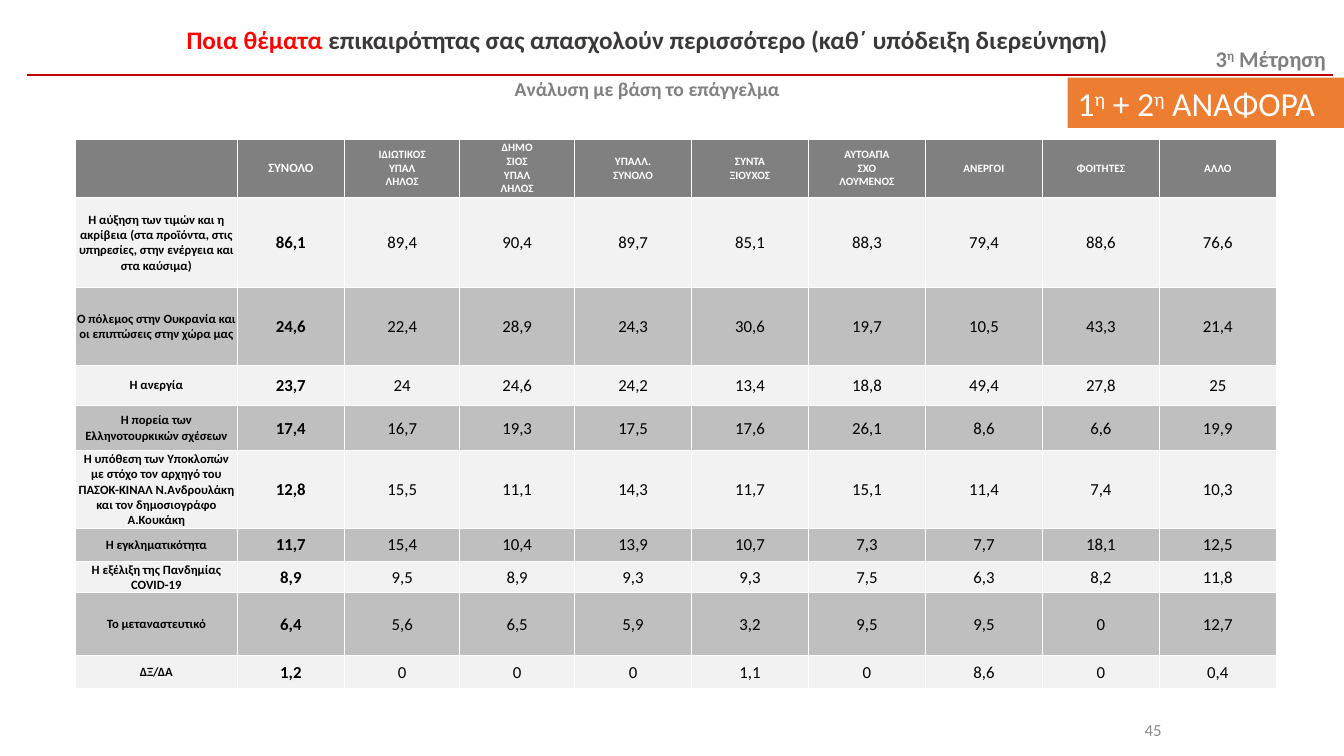
import pptx
import pptx.dml.color
import pptx.enum.shapes
import pptx.enum.text
import pptx.oxml
import pptx.oxml.ns
import pptx.util
from pptx.util import Inches

ALIGN = pptx.enum.text.PP_ALIGN
ANCHOR = pptx.enum.text.MSO_ANCHOR
AUTO_SIZE = pptx.enum.text.MSO_AUTO_SIZE

TITLE = [("Ποια θέματα ", "FF0000"),
         ("επικαιρότητας σας απασχολούν περισσότερο (καθ΄ υπόδειξη διερεύνηση)", "3B3838")]
SUBTITLE = "Ανάλυση με βάση το επάγγελμα"
WAVE = ["3", "η", " Μέτρηση"]
BANNER = ["1", "η", " + 2", "η", " ΑΝΑΦΟΡΑ"]
PAGE = "45"

HEADERS = [
    [""], ["ΣΥΝΟΛΟ"], ["ΙΔΙΩΤΙΚΟΣ", "ΥΠΑΛ", "ΛΗΛΟΣ"], ["ΔΗΜΟ", "ΣΙΟΣ", "ΥΠΑΛ", "ΛΗΛΟΣ"],
    ["ΥΠΑΛΛ.", "ΣΥΝΟΛΟ"], ["ΣΥΝΤΑ", "ΞΙΟΥΧΟΣ"], ["ΑΥΤΟΑΠΑ", "ΣΧΟ", "ΛΟΥΜΕΝΟΣ"],
    ["ΑΝΕΡΓΟΙ"], ["ΦΟΙΤΗΤΕΣ"], ["ΑΛΛΟ"],
]
ISSUES = [
    ("Η αύξηση των τιμών και η ακρίβεια (στα προϊόντα, στις υπηρεσίες, στην ενέργεια και στα καύσιμα)",
     "86,1 89,4 90,4 89,7 85,1 88,3 79,4 88,6 76,6"),
    ("Ο πόλεμος στην Ουκρανία και οι επιπτώσεις στην χώρα μας",
     "24,6 22,4 28,9 24,3 30,6 19,7 10,5 43,3 21,4"),
    ("Η ανεργία", "23,7 24 24,6 24,2 13,4 18,8 49,4 27,8 25"),
    ("Η πορεία των Ελληνοτουρκικών σχέσεων", "17,4 16,7 19,3 17,5 17,6 26,1 8,6 6,6 19,9"),
    ("Η υπόθεση των Υποκλοπών με στόχο τον αρχηγό του ΠΑΣΟΚ-ΚΙΝΑΛ Ν.Ανδρουλάκη και τον "
     "δημοσιογράφο Α.Κουκάκη", "12,8 15,5 11,1 14,3 11,7 15,1 11,4 7,4 10,3"),
    ("Η εγκληματικότητα", "11,7 15,4 10,4 13,9 10,7 7,3 7,7 18,1 12,5"),
    ("Η εξέλιξη της Πανδημίας COVID-19", "8,9 9,5 8,9 9,3 9,3 7,5 6,3 8,2 11,8"),
    ("Το μεταναστευτικό", "6,4 5,6 6,5 5,9 3,2 9,5 9,5 0 12,7"),
    ("ΔΞ/ΔΑ", "1,2 0 0 0 1,1 0 8,6 0 0,4"),
]
COLUMN_WIDTHS = [1.6, 1.07] + [1.14] * 2 + [1.16] * 6
ROW_HEIGHTS = [0.58, 0.89, 0.77, 0.4, 0.45, 0.77, 0.33, 0.31, 0.62, 0.33]
HEADER_FILL, ROW_FILLS = "808080", ["F2F2F2", "BFBFBF"]
HEADER_MARGINS = dict.fromkeys(["margin_left", "margin_top", "margin_right", "margin_bottom"], 0)
BODY_MARGINS = dict.fromkeys(["margin_left", "margin_top", "margin_right"], Inches(0.01))
BODY_MARGINS["margin_bottom"] = 0


def color(value):
    return pptx.dml.color.RGBColor.from_string(value)


def apply(target, formats):
    for name, value in formats.items():
        setattr(target, name, value)


def add_run(paragraph, text, size, hex_color, bold=False, superscript=False):
    run = paragraph.add_run()
    run.text = text
    apply(run.font, {"name": "Calibri", "size": pptx.util.Pt(size), "bold": bold})
    run.font.color.rgb = color(hex_color)
    if superscript:
        run.font._element.set("baseline", "30000")


def add_ordinals(paragraph, pieces, size, hex_color, bold=False):
    for piece in pieces:
        add_run(paragraph, piece, size, hex_color, bold, piece == "η")


def hang(paragraph):
    properties = paragraph._p.get_or_add_pPr()
    properties.set("marL", str(Inches(0.38)))
    properties.set("indent", str(-Inches(0.38)))


def add_box(shapes, place, fill=None, **formats):
    box = [Inches(length) for length in place]
    if fill:
        shape = shapes.add_shape(pptx.enum.shapes.MSO_SHAPE.RECTANGLE, *box)
        shape.shadow.inherit = False
        shape.fill.solid()
        shape.fill.fore_color.rgb = color(fill)
        shape.line.fill.background()
    else:
        shape = shapes.add_textbox(*box)
    apply(shape.text_frame, formats)
    return shape.text_frame


def style_cell(cell, fill, margins):
    properties = cell._tc.get_or_add_tcPr()
    for side in ["lnL", "lnR", "lnT", "lnB"]:
        properties.append(pptx.oxml.parse_xml(
            f'<a:{side} {pptx.oxml.ns.nsdecls("a")} w="6350"><a:solidFill>'
            f'<a:srgbClr val="FFFFFF"/></a:solidFill></a:{side}>'))
    cell.fill.solid()
    cell.fill.fore_color.rgb = color(fill)
    apply(cell, {"vertical_anchor": ANCHOR.MIDDLE, **margins})


def fill_cell(cell, lines, size, hex_color, bold, hanging=False):
    frame = cell.text_frame
    for index, line in enumerate(lines):
        paragraph = frame.add_paragraph() if index else frame.paragraphs[0]
        paragraph.alignment = ALIGN.CENTER
        if hanging:
            hang(paragraph)
        if line:
            add_run(paragraph, line, size, hex_color, bold)


def add_rule(shapes):
    rule = shapes.add_connector(pptx.enum.shapes.MSO_CONNECTOR.STRAIGHT,
                                Inches(0.27), Inches(0.74), Inches(13.22), Inches(0.74))
    rule.line.color.rgb = color("C00000")
    rule.line.width = pptx.util.Pt(1.5)
    rule._element.spPr.append(
        pptx.oxml.parse_xml(f'<a:effectLst {pptx.oxml.ns.nsdecls("a")}/>'))


def add_heading(shapes):
    frame = add_box(shapes, (0.18, 0.16, 12.48, 0.89), word_wrap=True,
                    auto_size=AUTO_SIZE.SHAPE_TO_FIT_TEXT)
    title, subtitle = frame.paragraphs[0], frame.add_paragraph()
    for paragraph in [title, subtitle]:
        hang(paragraph)
        paragraph.alignment = ALIGN.CENTER
    title.line_spacing = 1.1
    subtitle.space_before = pptx.util.Pt(16)
    for text, hex_color in TITLE:
        add_run(title, text, 18, hex_color, True)
    add_run(subtitle, SUBTITLE, 14, "808080", True)


def add_issue_table(shapes):
    table = shapes.add_table(len(ROW_HEIGHTS), len(COLUMN_WIDTHS), Inches(0.75), Inches(1.38),
                             Inches(sum(COLUMN_WIDTHS)), Inches(sum(ROW_HEIGHTS))).table
    for column, width in zip(table.columns, COLUMN_WIDTHS):
        column.width = Inches(width)
    for row, height in zip(table.rows, ROW_HEIGHTS):
        row.height = Inches(height)
    for column, lines in enumerate(HEADERS):
        cell = table.cell(0, column)
        style_cell(cell, HEADER_FILL, HEADER_MARGINS)
        fill_cell(cell, lines, 9 if column == 1 else 8, "FFFFFF", True, hanging=True)
    for row, (issue, values) in enumerate(ISSUES, start=1):
        for column, text in enumerate([issue] + values.split()):
            cell = table.cell(row, column)
            style_cell(cell, ROW_FILLS[(row - 1) % 2], BODY_MARGINS)
            fill_cell(cell, [text], 12 if column else 9, "000000", column < 2)


def main():
    presentation = pptx.Presentation()
    apply(presentation, {"slide_width": Inches(13.33), "slide_height": Inches(7.5)})
    shapes = presentation.slides.add_slide(presentation.slide_layouts[6]).shapes
    unwrapped = {"word_wrap": False, "auto_size": AUTO_SIZE.SHAPE_TO_FIT_TEXT}

    add_rule(shapes)
    wave = add_box(shapes, (11.96, 0.4, 1.37, 0.37), **unwrapped).paragraphs[0]
    add_ordinals(wave, WAVE, 16, "808080", True)
    add_heading(shapes)

    page = add_box(shapes, (10.98, 7.04, 0.64, 0.4), "FFFFFF", word_wrap=True,
                   vertical_anchor=ANCHOR.MIDDLE).paragraphs[0]
    page.alignment = ALIGN.RIGHT
    add_run(page, PAGE, 12, "8C8C8C")

    add_issue_table(shapes)
    banner = add_box(shapes, (10.59, 0.77, 2.74, 0.5), "ED7D31", vertical_anchor=ANCHOR.TOP,
                     **unwrapped).paragraphs[0]
    banner.alignment = ALIGN.LEFT
    add_ordinals(banner, BANNER, 24, "FFFFFF")
    presentation.save("out.pptx")


if __name__ == "__main__":
    main()
